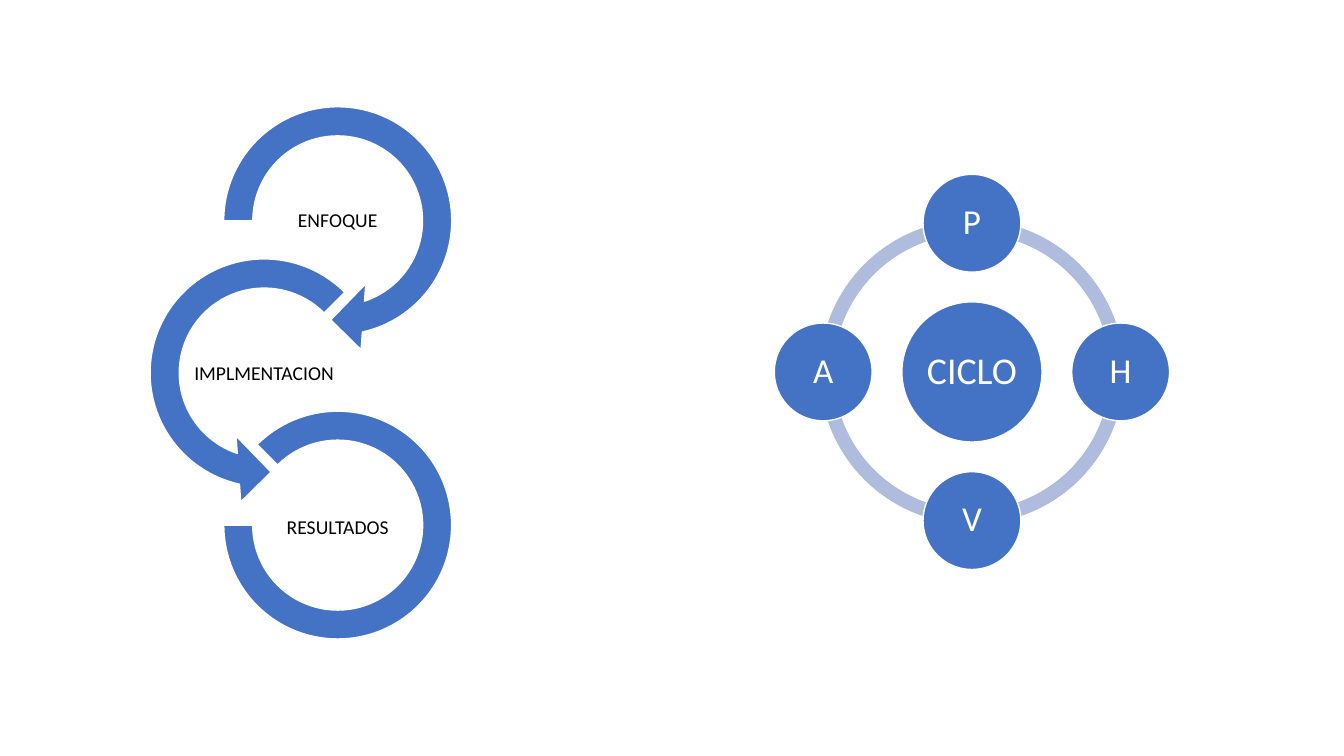
import math
import pptx
import pptx.util
import pptx.dml.color
import pptx.enum.shapes
import pptx.enum.text

KIND = pptx.enum.shapes.MSO_SHAPE
HUES = {"blue": "4472C4", "pale": "B0BCDE", "white": "FFFFFF", "black": "000000"}
FONT = "Calibri"

# label, shape, size, adjustments, column, label drop
STEPS = [
    ("ENFOQUE", KIND.CIRCULAR_ARROW, 2.63, (0.11, 11.423, 45, 108, 0.125), 1, 0),
    ("IMPLMENTACION", KIND.LEFT_CIRCULAR_ARROW, 2.63,
     (0.11, 11.423, 63, 189, 0.125), 0, 0.01),
    ("RESULTADOS", KIND.BLOCK_ARC, 2.26, (135, 108, 0.127), 1, 0.03),
]
HUB = "CICLO"
NODES = ["P", "H", "V", "A"]  # clockwise from the top

# Lengths in inches
LEFT, TOP = 2.62, 2.19  # centre of the first column and row of steps
COL, ROW = 0.73, 1.51
LABEL = (1.46, 0.73)
MID = (9.64, 3.69)  # centre of the cycle
REACH = 1.475  # from the hub to each node
RING, CORE, NODE = 3.02, 1.39, 0.97
TURN = 216  # full circle in adjustment units


def color(name):
    return pptx.dml.color.RGBColor.from_string(HUES[name])


def box(x, y, wide, high):
    """Left, top, width and height of a box centred on x, y."""
    return [pptx.util.Inches(n) for n in (x - wide / 2, y - high / 2, wide, high)]


def draw(group, kind, x, y, size, fill="blue", edge=True, adjust=()):
    shape = group.shapes.add_shape(kind, *box(x, y, size, size))
    shape.shadow.inherit = False
    for i, value in enumerate(adjust):
        shape.adjustments[i] = value
    shape.fill.solid()
    shape.fill.fore_color.rgb = color(fill)
    if edge:
        shape.line.color.rgb = color("white")
        shape.line.width = pptx.util.Pt(1)
    else:
        shape.line.fill.background()
    return shape


def write(shape, text, size, hue, inset):
    frame = shape.text_frame
    frame.word_wrap = True
    frame.vertical_anchor = pptx.enum.text.MSO_ANCHOR.MIDDLE
    frame.margin_left = frame.margin_right = pptx.util.Inches(inset)
    frame.margin_top = frame.margin_bottom = pptx.util.Inches(inset)
    para = frame.paragraphs[0]
    para.text = text
    para.alignment = pptx.enum.text.PP_ALIGN.CENTER
    para.line_spacing = 0.9
    para.font.name = FONT
    para.font.size = pptx.util.Pt(size)
    para.font.color.rgb = color(hue)


def add_steps(slide):
    group = slide.shapes.add_group_shape()
    for row, (text, kind, size, adjust, col, drop) in enumerate(STEPS):
        x, y = LEFT + col * COL, TOP + row * ROW
        draw(group, kind, x, y, size, adjust=adjust)
        label = group.shapes.add_textbox(*box(x, y + drop, *LABEL))
        write(label, text, 14, "black", 0.01)


def add_cycle(slide):
    group = slide.shapes.add_group_shape()
    step = TURN / len(NODES)
    for i in range(len(NODES)):
        ends = (i * step, (i + 1) * step % TURN, 0.046)
        draw(group, KIND.BLOCK_ARC, *MID, RING, "pale", False, ends)
    write(draw(group, KIND.OVAL, *MID, CORE), HUB, 27, "white", 0.04)
    for i, text in enumerate(NODES):
        angle = math.tau * i / len(NODES)
        x = MID[0] + REACH * math.sin(angle)
        y = MID[1] - REACH * math.cos(angle)
        write(draw(group, KIND.OVAL, x, y, NODE), text, 25, "white", 0.03)


def main():
    deck = pptx.Presentation()
    deck.slide_width = pptx.util.Inches(13.33)
    deck.slide_height = pptx.util.Inches(7.5)
    slide = deck.slides.add_slide(deck.slide_layouts[6])
    add_steps(slide)
    add_cycle(slide)
    deck.save("out.pptx")


if __name__ == "__main__":
    main()
